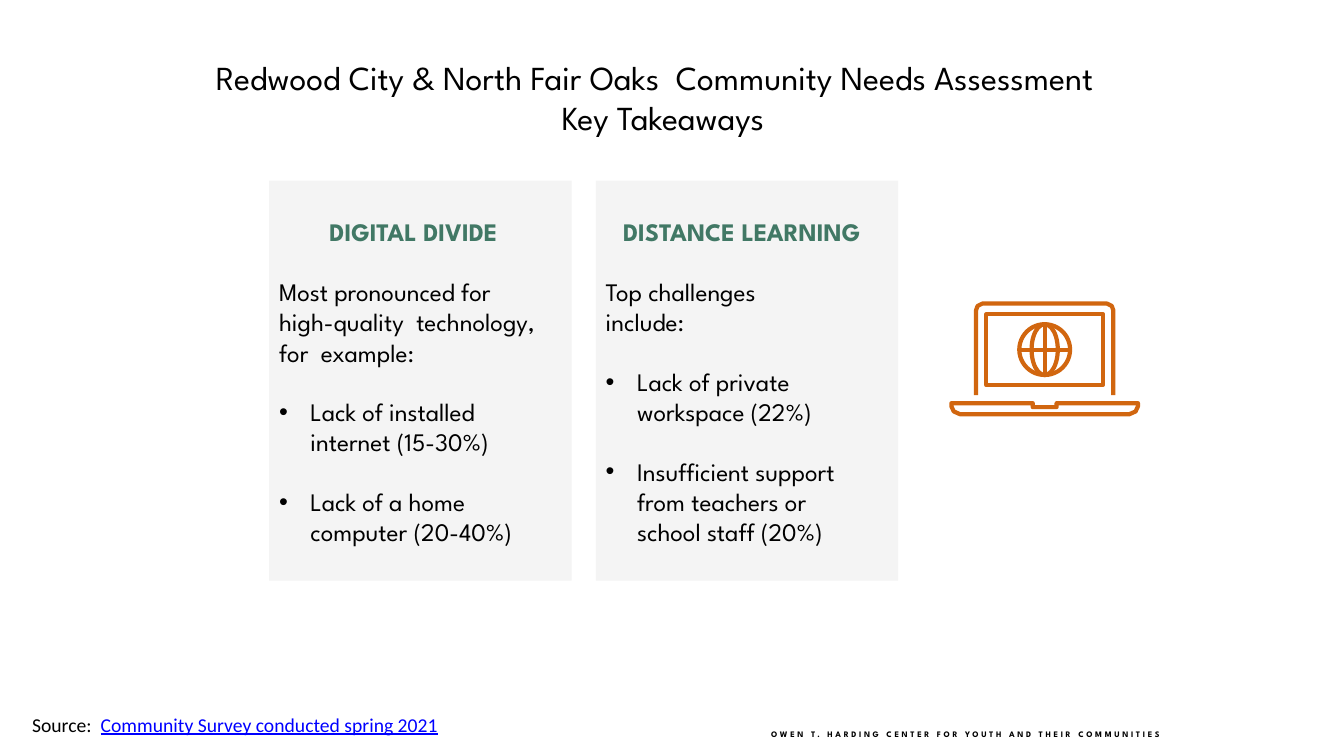
from lxml.etree import SubElement
from pptx import Presentation
from pptx.dml.color import RGBColor
from pptx.enum.shapes import MSO_CONNECTOR as Link, MSO_SHAPE as Kind
from pptx.enum.text import MSO_ANCHOR as Anchor, MSO_AUTO_SIZE as Fit, PP_ALIGN as Align
from pptx.oxml.ns import qn
from pptx.util import Cm, Pt

BLACK = RGBColor(0x00, 0x00, 0x00)
GREEN = RGBColor(0x41, 0x78, 0x65)
GRAY = RGBColor(0xF4, 0xF4, 0xF4)
ORANGE = RGBColor(0xD1, 0x66, 0x0F)
BLUE = RGBColor(0x00, 0x00, 0xFF)
HEAD, BODY = "League Spartan", "Calibri"

# Content; indents and right margins in cm
TITLE = [("Redwood City & North Fair Oaks  Community Needs Assessment", 0.42),
         ("Key Takeaways", 0)]
CARDS = [
    {"head": "DIGITAL DIVIDE", "indent": 1.52, "margin": 0.64,
     "intro": "Most pronounced for high-quality  technology, for  example:",
     "list": ["Lack of installed internet (15-30%)",
              "Lack of a home computer (20-40%)"]},
    {"head": "DISTANCE LEARNING", "indent": 0.69, "margin": 2.54,
     "intro": "Top challenges include:",
     "list": ["Lack of private workspace (22%)",
              "Insufficient support from teachers or school staff (20%)"]},
]
SOURCE = [("Source:  ", BLACK, False),
          ("Community Survey conducted spring 2021", BLUE, True)]
FOOTER = "OWEN T. HARDING CENTER FOR YOUTH AND THEIR COMMUNITIES"

# Icon: left half outlines as (distance from the middle, y) in cm
MID = 26.32
LID = [(1.73, 9.96), (1.73, 7.82), (1.69, 7.71), (1.57, 7.65)]
BASE = [(2.13, 10.44), (2.29, 10.37), (2.35, 10.24), (2.35, 10.16),
        (0.3, 10.16), (0.3, 10.26)]
GLOBE_Y, GLOBE_R = 8.81, 0.64

deck = Presentation()
deck.slide_width, deck.slide_height = Cm(33.86), Cm(19.05)
slide = deck.slides.add_slide(deck.slide_layouts[3])
shapes = slide.shapes


def place(shape, x, y, w, h):
    shape.left, shape.top, shape.width, shape.height = map(Cm, (x, y, w, h))


def setup(frame, wrap=True, pad=None):
    frame.word_wrap = wrap
    frame.auto_size = Fit.NONE
    frame.vertical_anchor = Anchor.TOP
    if pad is not None:
        frame.margin_left = frame.margin_right = frame.margin_bottom = 0
        frame.margin_top = Cm(pad)
    return frame


def add_run(para, text, size, color=BLACK, font=HEAD, bold=False):
    run = para.add_run()
    run.text = text
    run.font.size, run.font.name, run.font.bold = Pt(size), font, bold
    run.font.color.rgb = color
    return run


def next_para(frame, first):
    return frame.paragraphs[0] if first else frame.add_paragraph()


def layout(para, gap, left, right, hang=0, bullet=False):
    para.alignment = Align.LEFT
    para.space_before = Pt(gap)
    props = para._p.get_or_add_pPr()
    for key, size in (("marL", left), ("marR", right), ("indent", -hang)):
        props.set(key, str(Cm(size)))
    if bullet:
        SubElement(props, qn("a:buFont"), typeface="Arial")
        SubElement(props, qn("a:buChar"), char="•")
    else:
        SubElement(props, qn("a:buNone"))


# Title
place(shapes.title, 2.31, 1.3, 28.78, 2.31)
frame = setup(shapes.title.text_frame)
for n, (text, margin) in enumerate(TITLE):
    para = next_para(frame, n == 0)
    para.alignment = Align.CENTER
    para._p.get_or_add_pPr().set("marR", str(Cm(margin)))
    add_run(para, text, 24)

# Cards
for n, card in enumerate(CARDS):
    box = slide.placeholders[n + 1]
    place(box, 6.78 + n * 8.23, 4.55, 7.62, 10.08)
    box.fill.solid()
    box.fill.fore_color.rgb = GRAY
    frame = setup(box.text_frame, pad=0.91)
    para = frame.paragraphs[0]
    layout(para, 0, card["indent"], 0)
    add_run(para, card["head"], 18, GREEN, bold=True)
    para = frame.add_paragraph()
    layout(para, 21, 0.25, card["margin"])
    add_run(para, card["intro"], 18)
    for item in card["list"]:
        para = frame.add_paragraph()
        layout(para, 21, 1.04, 1.14, 0.79, True)
        add_run(para, item, 18)


# Laptop icon
def stroke(shape):
    shape.line.color.rgb = ORANGE
    shape.line.width = Pt(3)


def outline(shape):
    shape.shadow.inherit = False
    shape.fill.background()
    stroke(shape)


def mirror(half, close):
    points = [(MID - d, y) for d, y in half]
    points += [(MID + d, y) for d, y in reversed(half)]
    points = [(Cm(x), Cm(y)) for x, y in points]
    path = shapes.build_freeform(*points[0])
    path.add_line_segments(points[1:], close=close)
    outline(path.convert_to_shape())


mirror(LID, False)
mirror(BASE, True)
for kind, y, rx, ry in [(Kind.RECTANGLE, GLOBE_Y, 1.47, 0.89),
                        (Kind.OVAL, GLOBE_Y, GLOBE_R, GLOBE_R),
                        (Kind.OVAL, GLOBE_Y, 0.33, GLOBE_R)]:
    outline(shapes.add_shape(kind, Cm(MID - rx), Cm(y - ry), Cm(2 * rx), Cm(2 * ry)))
for dx, dy in [(GLOBE_R, 0), (0, GLOBE_R)]:
    line = shapes.add_connector(Link.STRAIGHT, Cm(MID - dx), Cm(GLOBE_Y - dy),
                                Cm(MID + dx), Cm(GLOBE_Y + dy))
    stroke(line)
    SubElement(line._element.spPr, qn("a:effectLst"))

# Footer and source
box = shapes.add_textbox(Cm(19.43), Cm(18.34), Cm(13.92), Cm(0.28))
run = add_run(setup(box.text_frame, pad=0.03).paragraphs[0], FOOTER, 6, bold=True)
run.font._element.set("spc", "190")
box = shapes.add_textbox(Cm(0.56), Cm(17.83), Cm(10.82), Cm(0.86))
para = setup(box.text_frame, wrap=False).paragraphs[0]
for text, color, under in SOURCE:
    add_run(para, text, 14, color, BODY).font.underline = under

deck.save("out.pptx")
